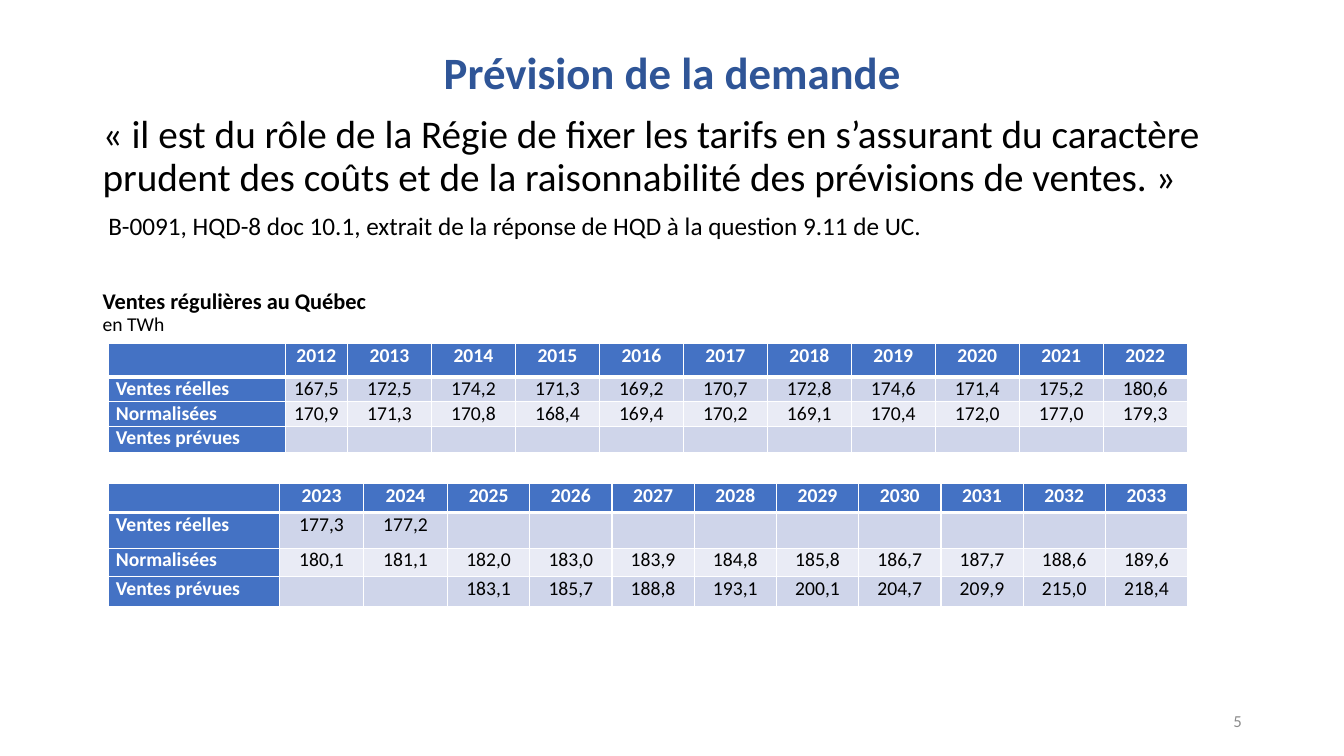
from lxml import etree
from pptx import Presentation
from pptx.dml.color import RGBColor
from pptx.enum import text
from pptx.oxml import ns
from pptx.util import Pt

TITLE = "Prévision de la demande"
PAGE_NUMBER = "5"
# text, size role, bold, space before
STATEMENT = [
    ("« il est du rôle de la Régie de fixer les tarifs en s’assurant du caractère "
     "prudent des coûts et de la raisonnabilité des prévisions de ventes. »", "quote", False, 0),
    (" B-0091, HQD-8 doc 10.1, extrait de la réponse de HQD à la question 9.11 de UC.",
     "reference", False, 10),
    ("Ventes régulières au Québec", "heading", True, 35.5),
    ("en TWh", "table", False, 0),
]
SALES_LABELS = ["Ventes réelles", "Normalisées", "Ventes prévues"]
SALES_TABLES = [
    {
        "top": 245.5,
        "widths": [126, 44.5] + [60] * 10,
        "heights": [24, 17.5, 17.5, 19],
        "years": range(2012, 2023),
        "sales": [
            "167,5 172,5 174,2 171,3 169,2 170,7 172,8 174,6 171,4 175,2 180,6".split(),
            "170,9 171,3 170,8 168,4 169,4 170,2 169,1 170,4 172,0 177,0 179,3".split(),
            [""] * 11,
        ],
    },
    {
        "top": 345.6,
        "widths": [122, 60, 60] + [58.75] * 9,
        "heights": [20.5, 25.5, 20.5, 21.5],
        "years": range(2023, 2034),
        "sales": [
            ["177,3", "177,2"] + [""] * 9,
            "180,1 181,1 182,0 183,0 183,9 184,8 185,8 186,7 187,7 188,6 189,6".split(),
            ["", ""] + "183,1 185,7 188,8 193,1 200,1 204,7 209,9 215,0 218,4".split(),
        ],
    },
]
THEME = {
    "font": "Calibri",
    "colors": {"title": "2F5597", "text": "000000", "page": "8C8C8C", "header": "4472C4",
               "header_text": "FFFFFF", "bands": ("CFD5EA", "E9EBF5"), "border": "FFFFFF"},
    "sizes": {"title": 32, "quote": 28, "reference": 18, "heading": 16, "table": 14, "page": 12},
}
COLORS, SIZES = THEME["colors"], THEME["sizes"]
LEFT, CONTENT_WIDTH, TABLE_LEFT = 66.25, 828, 77.75
CELL_MARGINS = {"margin_left": Pt(5), "margin_right": Pt(5), "margin_top": 0, "margin_bottom": 0}


def set_attributes(target, values):
    for name, value in values.items():
        setattr(target, name, value)


def write(paragraph, words, size, color, bold=False, **layout):
    set_attributes(paragraph, layout)
    font = {"name": THEME["font"], "size": Pt(SIZES[size]), "bold": bold}
    run = paragraph.add_run()
    run.text = words
    set_attributes(run.font, font)
    run.font.color.rgb = RGBColor.from_string(COLORS[color])


def add_box(slide, left, top, width, height):
    frame = slide.shapes.add_textbox(Pt(left), Pt(top), Pt(width), Pt(height)).text_frame
    frame.word_wrap = True
    return frame


def add_borders(cell, bottom_width):
    properties = cell._tc.get_or_add_tcPr()
    for side in "LRTB":
        width = bottom_width if side == "B" else 1
        line = etree.SubElement(properties, ns.qn(f"a:ln{side}"), w=str(Pt(width)))
        fill = etree.SubElement(line, ns.qn("a:solidFill"))
        etree.SubElement(fill, ns.qn("a:srgbClr"), val=COLORS["border"])


def format_cell(cell, words, row, column):
    is_header = row == 0 or column == 0
    add_borders(cell, 3 if row == 0 else 1)
    cell.fill.solid()
    fill = COLORS["header"] if is_header else COLORS["bands"][(row - 1) % 2]
    cell.fill.fore_color.rgb = RGBColor.from_string(fill)
    set_attributes(cell, CELL_MARGINS)
    paragraph = cell.text_frame.paragraphs[0]
    if words:
        write(paragraph, words, "table", "header_text" if is_header else "text", is_header,
              alignment=text.PP_ALIGN.CENTER if column else text.PP_ALIGN.LEFT)
    else:
        # An empty cell otherwise takes 18 pt and stretches its row
        etree.SubElement(paragraph._p, ns.qn("a:endParaRPr"), sz=str(SIZES["table"] * 100))


def add_sales_table(slide, content):
    rows = [["", *map(str, content["years"])]]
    rows += [[label, *sales] for label, sales in zip(SALES_LABELS, content["sales"])]
    widths, heights = content["widths"], content["heights"]
    table = slide.shapes.add_table(len(rows), len(widths), Pt(TABLE_LEFT), Pt(content["top"]),
                                   Pt(sum(widths)), Pt(sum(heights))).table
    for column, width in zip(table.columns, widths):
        column.width = Pt(width)
    for row, height in zip(table.rows, heights):
        row.height = Pt(height)
    for r, row in enumerate(rows):
        for c, words in enumerate(row):
            format_cell(table.cell(r, c), words, r, c)


def main():
    presentation = Presentation()
    set_attributes(presentation, {"slide_width": Pt(960), "slide_height": Pt(540)})
    slide = presentation.slides.add_slide(presentation.slide_layouts[5])

    title = slide.shapes.title
    set_attributes(title, {"left": Pt(LEFT), "top": Pt(28.8),
                           "width": Pt(CONTENT_WIDTH), "height": Pt(49.7)})
    title.text_frame.vertical_anchor = text.MSO_ANCHOR.MIDDLE
    write(title.text_frame.paragraphs[0], TITLE, "title", "title", True,
          alignment=text.PP_ALIGN.CENTER, line_spacing=0.9)

    statement = add_box(slide, LEFT, 78.5, CONTENT_WIDTH, 408)
    for i, (words, size, bold, space) in enumerate(STATEMENT):
        paragraph = statement.add_paragraph() if i else statement.paragraphs[0]
        write(paragraph, words, size, "text", bold, line_spacing=0.9, space_before=Pt(space))

    page = add_box(slide, 678.25, 500.5, 216, 28.75)
    page.vertical_anchor = text.MSO_ANCHOR.MIDDLE
    write(page.paragraphs[0], PAGE_NUMBER, "page", "page", alignment=text.PP_ALIGN.RIGHT)

    for content in SALES_TABLES:
        add_sales_table(slide, content)
    presentation.save("out.pptx")


if __name__ == "__main__":
    main()
